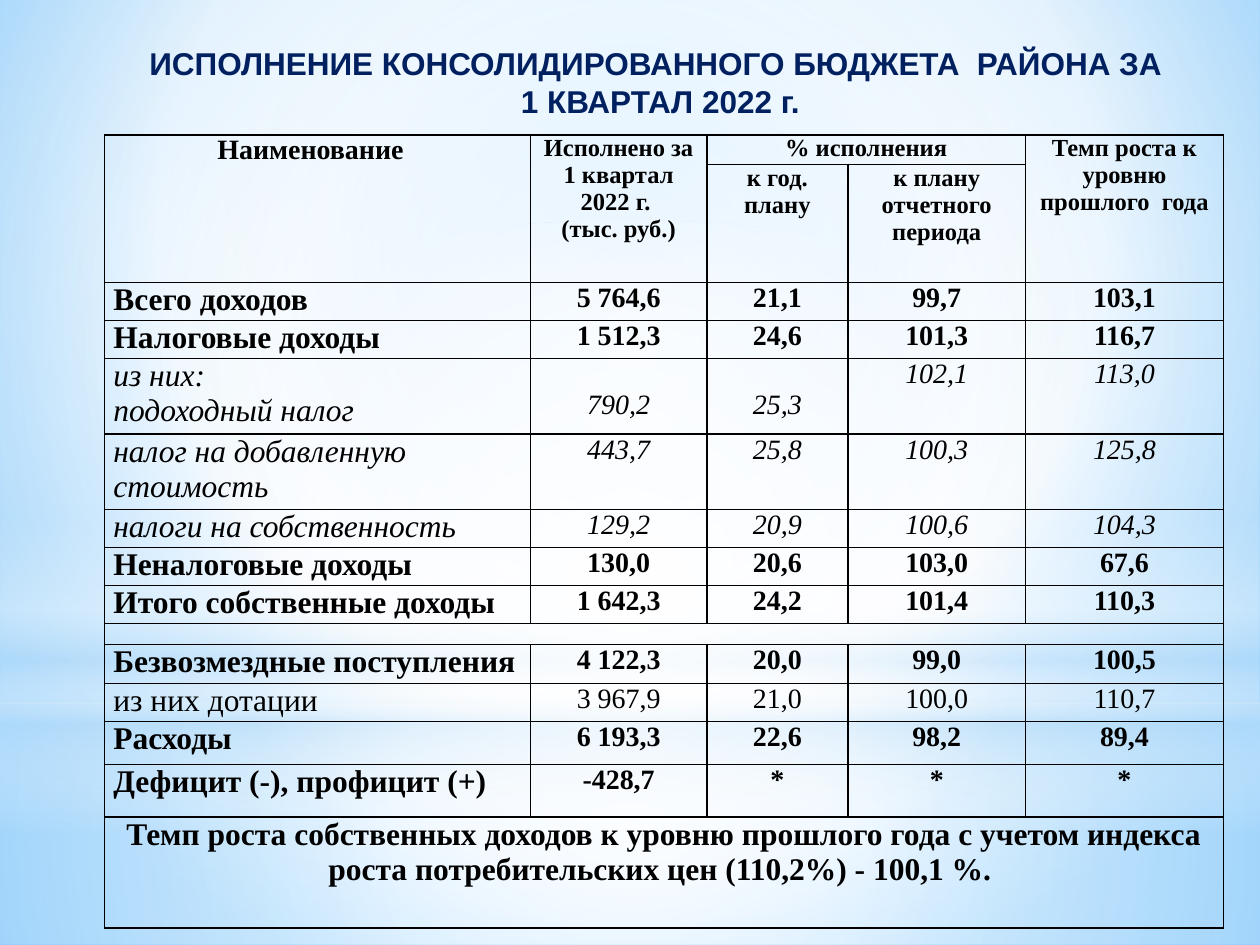
from dataclasses import dataclass
from typing import Sequence

from pptx import Presentation
from pptx.dml.color import RGBColor
from pptx.enum.shapes import MSO_SHAPE
from pptx.enum.text import PP_ALIGN
from pptx.oxml import parse_xml
from pptx.oxml.ns import nsdecls, qn
from pptx.util import Inches, Pt

LEFT, CENTER, JUSTIFY = PP_ALIGN.LEFT, PP_ALIGN.CENTER, PP_ALIGN.JUSTIFY
RECTANGLE, OVAL = MSO_SHAPE.RECTANGLE, MSO_SHAPE.OVAL
COLORS = {"title": "002060", "ink": "000000", "white": "FFFFFF", "haze": "B4DCFA",
          "sky": "9ED5FF", "deep_sky": "5BB9FF"}
TITLE_FONT, TABLE_FONT = "Arial", "Times New Roman"
RADIAL = '<a:path path="circle"><a:fillToRect l="{}" t="{}" r="{}" b="{}"/></a:path>'
CENTRED = RADIAL.format(50000, 50000, 50000, 50000)
OFF_CENTRE = RADIAL.format(20000, 10000, 20000, 60000)
VERTICAL = '<a:lin ang="5400000" scaled="0"/>'


@dataclass
class Glow:
    kind: int
    top: float
    height: float
    stops: Sequence[tuple]
    direction: str = CENTRED


@dataclass
class BudgetRow:
    name: str
    values: Sequence[str]
    height: float
    bold: bool = True
    italic: bool = False
    align: int = LEFT


# Stops are position, colour, opacity, all in percent
GLOWS = [
    Glow(RECTANGLE, 5.58, 1.92, [(0, "white", 91), (37, "white", 76), (100, "haze", 79)]),
    Glow(RECTANGLE, 0, 5.58, [(0, "white", 89), (48, "white", 62), (100, "haze", 79)]),
    Glow(RECTANGLE, 4.12, 2.5, [(0, "white", 0), (29, "white", 30), (45, "haze", 40),
                                (55, "white", 26), (65, "haze", 60), (100, "white", 0)], VERTICAL),
    Glow(OVAL, 1.75, 5.58, [(0, "white", 100), (56, "white", 0)]),
]
COLUMN_WIDTHS = [3.38, 1.4, 1.12, 1.41, 1.57]
HEADER_HEIGHTS = [0.23, 0.94]
# Row, column, last row, last column, text, size
HEADERS = [
    (0, 0, 1, 0, "Наименование  ", 16),
    (0, 1, 1, 1, "Исполнено за 1 квартал 2022 г. \n(тыс. руб.)", 14),
    (0, 2, 0, 3, "% исполнения", 14),
    (0, 4, 1, 4, "Темп роста к уровню прошлого  года", 14),
    (1, 2, 1, 2, "к год. плану", 14),
    (1, 3, 1, 3, "к плану отчетного периода", 14),
]
INCOME_TAX = "из них:\nподоходный налог"
BUDGET = [
    BudgetRow("Всего доходов", ("5 764,6", "21,1", "99,7", "103,1"), 0.29),
    BudgetRow("Налоговые доходы ", ("1 512,3", "24,6", "101,3", "116,7"), 0.29),
    BudgetRow(INCOME_TAX, ("790,2", "25,3", "102,1", "113,0"), 0.58, False, True),
    BudgetRow("налог на добавленную стоимость", ("443,7", "25,8", "100,3", "125,8"), 0.58, False, True),
    BudgetRow("налоги на собственность", ("129,2", "20,9", "100,6", "104,3"), 0.29, False, True),
    BudgetRow("Неналоговые доходы", ("130,0", "20,6", "103,0", "67,6"), 0.3),
    BudgetRow("Итого собственные доходы", ("1 642,3", "24,2", "101,4", "110,3"), 0.3, align=JUSTIFY),
    BudgetRow("", (), 0.17),
    BudgetRow("Безвозмездные поступления", ("4 122,3", "20,0", "99,0", "100,5"), 0.31),
    BudgetRow("из них дотации", ("3 967,9", "21,0", "100,0", "110,7"), 0.29, False),
    BudgetRow("Расходы", ("6 193,3", "22,6", "98,2", "89,4"), 0.34),
    BudgetRow("Дефицит (-), профицит (+)", ("-428,7", "*", "*", "*"), 0.42),
    BudgetRow("Темп роста собственных доходов к уровню прошлого года с учетом индекса "
              "роста потребительских цен (110,2%) - 100,1 %. ", (), 0.88, align=CENTER),
]


def gradient_xml(stops: Sequence[tuple], direction: str) -> str:
    marks = "".join(
        f'<a:gs pos="{pos * 1000}"><a:srgbClr val="{COLORS[color]}">'
        f'<a:alpha val="{opacity * 1000}"/></a:srgbClr></a:gs>'
        for pos, color, opacity in stops)
    return (f'<a:gradFill {nsdecls("a")} rotWithShape="1"><a:gsLst>{marks}</a:gsLst>'
            f'{direction}</a:gradFill>')


def write(frame, text: str, *, size: float, font: str = TABLE_FONT, color: str = "ink",
          bold: bool = True, italic: bool = False, align: int = CENTER) -> None:
    frame.word_wrap = True
    for index, line in enumerate(text.split("\n")):
        paragraph = frame.add_paragraph() if index else frame.paragraphs[0]
        paragraph.alignment = align
        run = paragraph.add_run()
        run.text = line
        run.font.size, run.font.name = Pt(size), font
        run.font.bold, run.font.italic = bold, italic
        run.font.color.rgb = RGBColor.from_string(COLORS[color])


def draw_background(slide) -> None:
    stops = [(0, "sky", 100), (60, "white", 100), (100, "deep_sky", 100)]
    slide.element.cSld.insert(0, parse_xml(
        f'<p:bg {nsdecls("p", "a")}><p:bgPr>{gradient_xml(stops, OFF_CENTRE)}'
        '<a:effectLst/></p:bgPr></p:bg>'))


def draw_glow(slide, glow: Glow) -> None:
    shape = slide.shapes.add_shape(glow.kind, 0, Inches(glow.top), Inches(10), Inches(glow.height))
    shape.shadow.inherit = False
    shape.line.fill.background()
    shape.fill.background()
    properties = shape.element.spPr
    properties.replace(properties.find(qn("a:noFill")),
                       parse_xml(gradient_xml(glow.stops, glow.direction)))


def prepare_cell(cell) -> None:
    """Clear the fill, set the insets and rule all four sides."""
    cell.margin_left = cell.margin_right = Inches(0.07)
    cell.margin_top = cell.margin_bottom = 0
    cell.fill.background()
    properties = cell._tc.get_or_add_tcPr()
    for position, side in enumerate(("lnL", "lnR", "lnT", "lnB")):
        properties.insert(position, parse_xml(
            f'<a:{side} {nsdecls("a")} w="{Pt(1)}"><a:solidFill>'
            f'<a:srgbClr val="{COLORS["ink"]}"/></a:solidFill></a:{side}>'))


def draw_table(slide) -> None:
    heights = HEADER_HEIGHTS + [row.height for row in BUDGET]
    table = slide.shapes.add_table(
        len(heights), len(COLUMN_WIDTHS), Inches(0.83), Inches(1.07),
        Inches(sum(COLUMN_WIDTHS)), Inches(sum(heights))).table
    table.first_row = table.horz_banding = False
    for column, width in zip(table.columns, COLUMN_WIDTHS):
        column.width = Inches(width)
    for row, height in zip(table.rows, heights):
        row.height = Inches(height)
    for cell in table.iter_cells():
        prepare_cell(cell)
        # Small empty text keeps the separator row low
        cell.text_frame.paragraphs[0]._p.append(
            parse_xml(f'<a:endParaRPr {nsdecls("a")} sz="800"/>'))

    # Header
    for top, left, bottom, right, text, size in HEADERS:
        cell = table.cell(top, left)
        if (top, left) != (bottom, right):
            cell.merge(table.cell(bottom, right))
        write(cell.text_frame, text, size=size)

    # Budget lines; a line without values spans the table
    for index, line in enumerate(BUDGET, start=len(HEADER_HEIGHTS)):
        name_cell = table.cell(index, 0)
        if not line.values:
            name_cell.merge(table.cell(index, len(COLUMN_WIDTHS) - 1))
        if line.name:
            write(name_cell.text_frame, line.name, size=18, bold=line.bold,
                  italic=line.italic, align=line.align)
        for column, value in enumerate(line.values, start=1):
            cell = table.cell(index, column)
            write(cell.text_frame, value, size=16, bold=line.bold, italic=line.italic)
            if line.name == INCOME_TAX and column <= 2:
                cell.margin_top = Inches(0.25)


def main() -> None:
    deck = Presentation()
    deck.slide_width, deck.slide_height = Inches(10), Inches(7.5)
    slide = deck.slides.add_slide(deck.slide_layouts[6])
    draw_background(slide)
    for glow in GLOWS:
        draw_glow(slide, glow)
    title = slide.shapes.add_textbox(Inches(0.83), Inches(0.3), Inches(8.82), Inches(0.71))
    write(title.text_frame, "ИСПОЛНЕНИЕ КОНСОЛИДИРОВАННОГО БЮДЖЕТА  РАЙОНА ЗА \n1 КВАРТАЛ 2022 г.",
          size=18, font=TITLE_FONT, color="title")
    draw_table(slide)
    deck.save("out.pptx")


if __name__ == "__main__":
    main()
